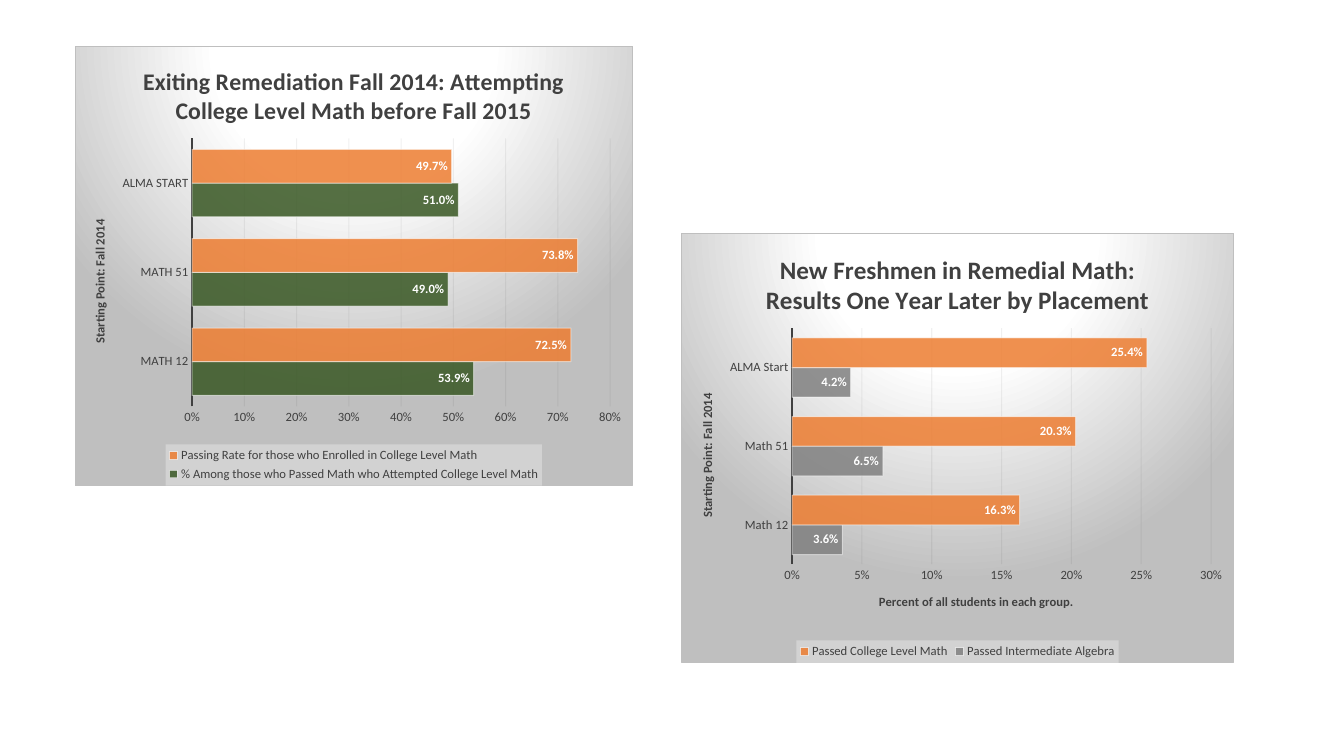
"""Build a slide with two bar charts on remedial math results."""
from pptx import Presentation
from pptx.chart.data import CategoryChartData
from pptx.dml.color import RGBColor
from pptx.enum.chart import XL_CHART_TYPE, XL_LABEL_POSITION, XL_LEGEND_POSITION, XL_TICK_MARK
from pptx.oxml import parse_xml
from pptx.oxml.ns import nsdecls
from pptx.util import Cm, Pt

NS = nsdecls("c", "a")
FRAME = f"""<c:spPr {NS}>
  <a:gradFill><a:gsLst>
    <a:gs pos="0"><a:srgbClr val="FFFFFF"/></a:gs>
    <a:gs pos="39000"><a:srgbClr val="FFFFFF"/></a:gs>
    <a:gs pos="100000"><a:srgbClr val="BFBFBF"/></a:gs>
  </a:gsLst><a:path path="circle">
    <a:fillToRect l="50000" t="-80000" r="50000" b="180000"/>
  </a:path></a:gradFill>
  <a:ln w="9525"><a:solidFill><a:srgbClr val="BFBFBF"/></a:solidFill></a:ln>
</c:spPr>"""
LEGEND_FILL = f"""<c:spPr {NS}><a:solidFill>
  <a:srgbClr val="F2F2F2"><a:alpha val="39000"/></a:srgbClr>
</a:solidFill></c:spPr>"""

CHARTS = [
    dict(
        box=(17.17, 5.88, 13.92, 10.84),
        plot=dict(x=0.2, y=0.22, w=0.76, h=0.55),
        title="New Freshmen in Remedial Math: Results One Year Later by Placement",
        title_size=18,
        cats=["Math 12", "Math 51", "ALMA Start"],
        value_title="Percent of all students in each group.",
        series=[
            ("Passed Intermediate Algebra", "808080", (0.036, 0.065, 0.042)),
            ("Passed College Level Math", "ED7D31", (0.163, 0.203, 0.254)),
        ],
        top=0.3, step=0.05,
    ),
    dict(
        box=(1.88, 1.15, 14.07, 11.1),
        plot=dict(x=0.21, y=0.21, w=0.75, h=0.61),
        title="Exiting Remediation Fall 2014: Attempting College Level Math before Fall 2015",
        title_size=17,
        cats=["MATH 12", "MATH 51", "ALMA START"],
        value_title=None,
        series=[
            ("% Among those who Passed Math who Attempted College Level Math",
             "385723", (0.539, 0.49, 0.51)),
            ("Passing Rate for those who Enrolled in College Level Math",
             "ED7D31", (0.725, 0.738, 0.497)),
        ],
        top=0.8, step=0.1,
    ),
]


def style(font, size, color="404040", bold=False):
    font.name, font.size, font.bold = "Calibri", Pt(size), bold
    font.color.rgb = RGBColor.from_string(color)


def paint(fill, color, opacity):
    fill.solid()
    fill.fore_color.rgb = RGBColor.from_string(color)
    clr = fill._xPr.find(".//{*}srgbClr")
    clr.append(parse_xml(f'<a:alpha {nsdecls("a")} val="{opacity * 1000}"/>'))


prs = Presentation()
prs.slide_width, prs.slide_height = Cm(33.87), Cm(19.05)
s = prs.slides.add_slide(prs.slide_layouts[6])

for spec in CHARTS:
    data = CategoryChartData(number_format="0.0%")
    data.categories = spec["cats"]
    for name, color, vals in spec["series"]:
        data.add_series(name, vals)
    box = [Cm(v) for v in spec["box"]]
    chart = s.shapes.add_chart(XL_CHART_TYPE.BAR_CLUSTERED, *box, data).chart
    style(chart.font, 10, "000000")
    cs = chart._chartSpace
    cs.find("{*}chart").addnext(parse_xml(FRAME))

    ca, va = chart.category_axis, chart.value_axis
    chart.has_title = True
    titles = [(chart.chart_title, spec["title"], spec["title_size"]),
              (ca.axis_title, "Starting Point: Fall 2014", 9)]
    if spec["value_title"]:
        titles.append((va.axis_title, spec["value_title"], 9))
    for title, text, size in titles:
        p = title.text_frame.paragraphs[0]
        p.text = text
        style(p.runs[0].font, size, bold=True)
    chart.chart_title.include_in_layout = False

    for axis in (ca, va):
        axis.major_tick_mark = axis.minor_tick_mark = XL_TICK_MARK.NONE
        style(axis.tick_labels.font, 9)
    ca.format.line.width = Pt(1.5)
    ca.format.line.color.rgb = RGBColor.from_string("404040")
    va.format.line.fill.background()
    va.minimum_scale, va.maximum_scale = 0, spec["top"]
    va.major_unit = spec["step"]
    va.tick_labels.number_format = "0%"
    va.tick_labels.number_format_is_linked = False
    va.has_major_gridlines = True
    grid = va.major_gridlines.format.line
    grid.width = Pt(0.75)
    paint(grid.fill, "0D0D0D", 5)

    plot = chart.plots[0]
    plot.gap_width, plot.overlap = 65, 0
    plot.vary_by_categories = False
    for ser, (name, color, vals) in zip(plot.series, spec["series"]):
        paint(ser.format.fill, color, 85)
        ser.format.line.width = Pt(0.75)
        paint(ser.format.line.fill, "FFFFFF", 50)
        labels = ser.data_labels
        labels.show_value = True
        labels.position = XL_LABEL_POSITION.INSIDE_END
        labels.number_format = "0.0%"
        labels.number_format_is_linked = False
        style(labels.font, 9, "FFFFFF", bold=True)

    chart.has_legend = True
    chart.legend.position = XL_LEGEND_POSITION.BOTTOM
    chart.legend.include_in_layout = False
    style(chart.legend.font, 9)
    cs.find(".//{*}legend/{*}txPr").addprevious(parse_xml(LEGEND_FILL))

    area = cs.find(".//{*}plotArea")
    for old in area.findall("{*}layout"):
        area.remove(old)
    edges = "".join(f'<c:{k} val="{v}"/>' for k, v in spec["plot"].items())
    area.insert(0, parse_xml(
        f'<c:layout {NS}><c:manualLayout><c:layoutTarget val="inner"/>'
        f'<c:xMode val="edge"/><c:yMode val="edge"/>{edges}'
        f'</c:manualLayout></c:layout>'))

prs.save("out.pptx")
